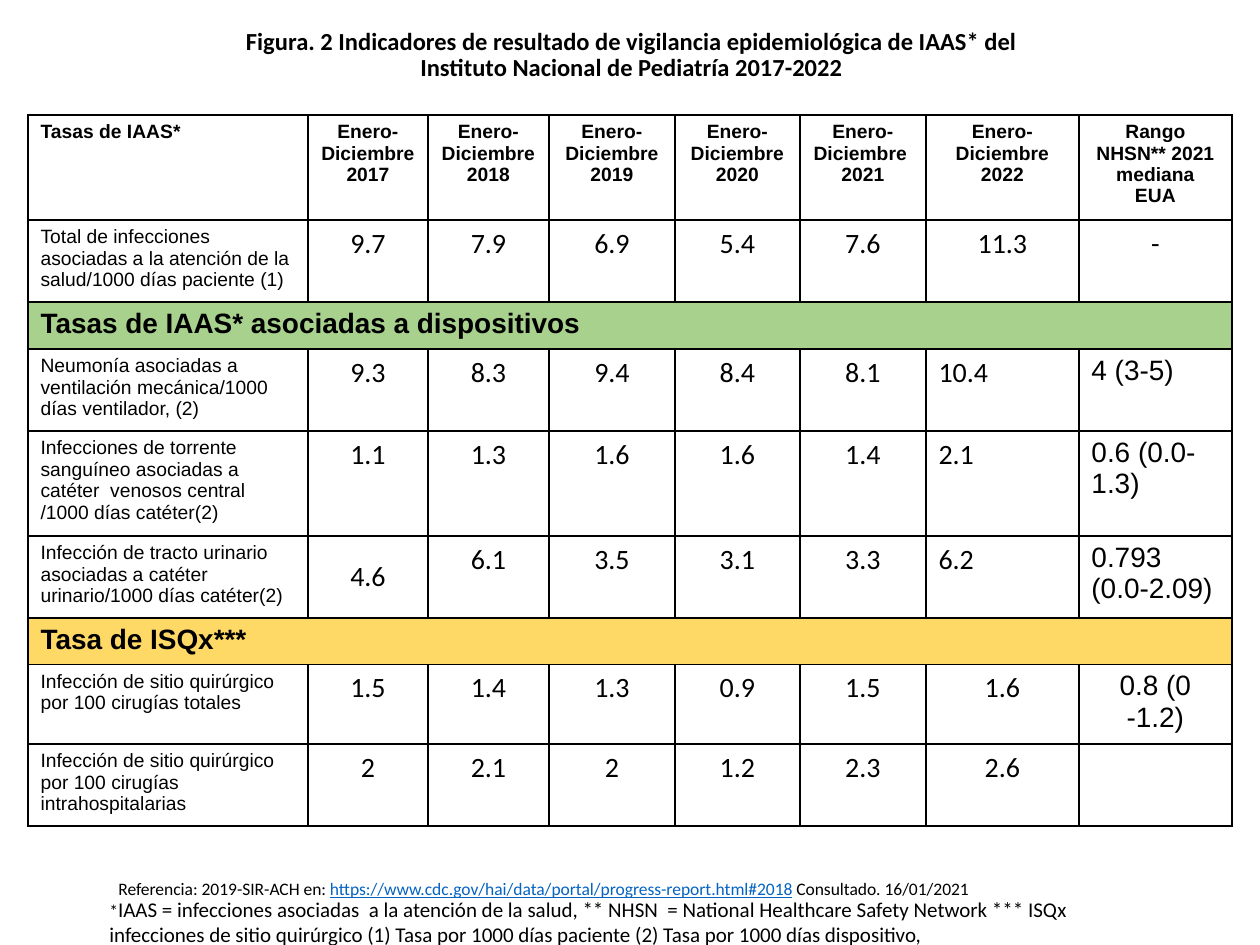
from lxml import etree
from pptx import Presentation
from pptx import util as u
from pptx.dml.color import RGBColor
from pptx.enum import text
from pptx.oxml.ns import qn

DPI = 126
HUES = {"ink": "000000", "link": "0563C1", "page": "FFFFFF",
        "green": "A9D18E", "gold": "FFD966"}
MID = text.PP_ALIGN.CENTER
LEFT = text.PP_ALIGN.LEFT
COLS = [280, 120, 121, 126, 125, 126, 153, 153]
HIGHS = [60, 69, 47, 47, 57, 57, 44, 57, 57]
HEAD = (["Tasas de IAAS*"]
        + [f"Enero-Diciembre {year}" for year in range(2017, 2021)]
        + ["Enero- Diciembre  2021", "Enero-Diciembre 2022",
           "Rango NHSN** 2021 mediana\nEUA"])
ROWS = [
    HEAD,
    ["Total de infecciones asociadas a la atención de la salud/1000 días paciente (1)",
     "9.7", "7.9", "6.9", "5.4", "7.6", "11.3", "-"],
    ["Tasas de IAAS* asociadas a dispositivos"],
    ["Neumonía asociadas a ventilación mecánica/1000 días ventilador, (2)",
     "9.3", "8.3", "9.4", "8.4", "8.1", "10.4", "4 (3-5)"],
    ["Infecciones de torrente sanguíneo asociadas a catéter  venosos central /1000 días catéter(2)",
     "1.1", "1.3", "1.6", "1.6", "1.4", "2.1", "0.6 (0.0-1.3)"],
    ["Infección de tracto urinario asociadas a catéter urinario/1000 días catéter(2)",
     "4.6", "6.1", "3.5", "3.1", "3.3", "6.2", "0.793 (0.0-2.09)"],
    ["Tasa de ISQx***"],
    ["Infección de sitio quirúrgico por 100 cirugías totales",
     "1.5", "1.4", "1.3", "0.9", "1.5", "1.6", "0.8 (0 -1.2)"],
    ["Infección de sitio quirúrgico por 100 cirugías intrahospitalarias",
     "2", "2.1", "2", "1.2", "2.3", "2.6", ""],
]
BANDS = {2: "green", 6: "gold"}
DEVICE = (3, 4, 5)


def px(n):
    """Turn px into EMU."""
    return u.Emu(round(n * 914400 / DPI))


def hue(name):
    """Look up a colour."""
    return RGBColor.from_string(HUES[name])


def write(para, words, size=12, font="Calibri", bold=False, color="ink", line=False):
    """Add formatted text to a paragraph, with a line break at each vertical tab."""
    for i, part in enumerate(words.split("\v")):
        if i:
            para.add_line_break()
        run = para.add_run()
        run.text = part
        face = run.font
        face.size, face.name, face.bold = u.Pt(size), font, bold
        face.underline = line
        face.color.rgb = hue(color)


def fill(frame, words, align=LEFT, **style):
    """Write each line of words as a paragraph."""
    for i, part in enumerate(words.split("\n")):
        para = frame.add_paragraph() if i else frame.paragraphs[0]
        para.alignment = align
        write(para, part, **style)


def box(slide, x, y, w, h):
    """Add a wrapping text box and return its frame."""
    frame = slide.shapes.add_textbox(px(x), px(y), px(w), px(h)).text_frame
    frame.word_wrap = True
    return frame


def edge(cell):
    """Draw a thin black line on all four sides of a cell."""
    props = cell._tc.get_or_add_tcPr()
    for side in "LRTB":
        line = etree.SubElement(props, qn(f"a:ln{side}"), w=str(u.Pt(1)))
        solid = etree.SubElement(line, qn("a:solidFill"))
        etree.SubElement(solid, qn("a:srgbClr"), val=HUES["ink"])


def look(row, col):
    """Return the text format of a table cell."""
    last = len(COLS) - 1
    if row in BANDS:
        return dict(size=16, font="Arial", bold=True)
    if col == 0 or row == 0:
        return dict(size=11, font="Arial", bold=row == 0, align=MID if col else LEFT)
    side = LEFT if row in DEVICE and col >= last - 1 else MID
    font = "Arial" if col == last and row > 1 else "Calibri"
    return dict(size=16, font=font, align=side)


def title(slide, x, y, w, h):
    """Place the heading."""
    frame = box(slide, x, y, w, h)
    frame.vertical_anchor = text.MSO_ANCHOR.MIDDLE
    fill(frame, "Figura. 2 Indicadores de resultado de vigilancia epidemiológica de IAAS* del\v"
         "Instituto Nacional de Pediatría 2017-2022", align=MID, size=14, bold=True)
    frame.paragraphs[0].line_spacing = 0.9


def rates(slide, x, y):
    """Place the table of rates."""
    grid = slide.shapes.add_table(len(ROWS), len(COLS), px(x), px(y),
                                  px(sum(COLS)), px(sum(HIGHS))).table
    grid.first_row = grid.horz_banding = False
    for col, wide in zip(grid.columns, COLS):
        col.width = px(wide)
    for r, (high, words) in enumerate(zip(HIGHS, ROWS)):
        grid.rows[r].height = px(high)
        for c in range(len(COLS)):
            cell = grid.cell(r, c)
            edge(cell)
            cell.fill.solid()
            cell.fill.fore_color.rgb = hue(BANDS.get(r, "page"))
            if c < len(words):
                fill(cell.text_frame, words[c], **look(r, c))
        if r in BANDS:
            grid.cell(r, 0).merge(grid.cell(r, len(COLS) - 1))
    grid.cell(5, 1).vertical_anchor = text.MSO_ANCHOR.MIDDLE


def notes(slide, x, y, w):
    """Place the key to the terms and the reference line."""
    key = box(slide, x, y + 18, w, 63).paragraphs[0]
    write(key, "*", size=10)
    write(key, "IAAS = infecciones asociadas  a la atención de la salud, ** NHSN  = "
          "National Healthcare Safety Network *** ISQx infecciones de sitio quirúrgico "
          "(1) Tasa por 1000 días paciente (2) Tasa por 1000 días dispositivo,")
    ref = box(slide, x + 9, y, w, 34).paragraphs[0]
    write(ref, "Referencia: 2019-SIR-ACH en: ", size=10)
    write(ref, "https://www.cdc.gov/hai/data/portal/progress-report.html#2018",
          size=10, color="link", line=True)
    write(ref, " Consultado. 16/01/2021", size=10)


def main():
    """Build and save the slide."""
    deck = Presentation()
    deck.slide_width, deck.slide_height = px(1260), px(945)
    slide = deck.slides.add_slide(deck.slide_layouts[6])
    title(slide, 69, 15, 1125, 81)
    rates(slide, 28, 115)
    notes(slide, 97, 872, 1066)
    deck.save("out.pptx")


if __name__ == "__main__":
    main()
